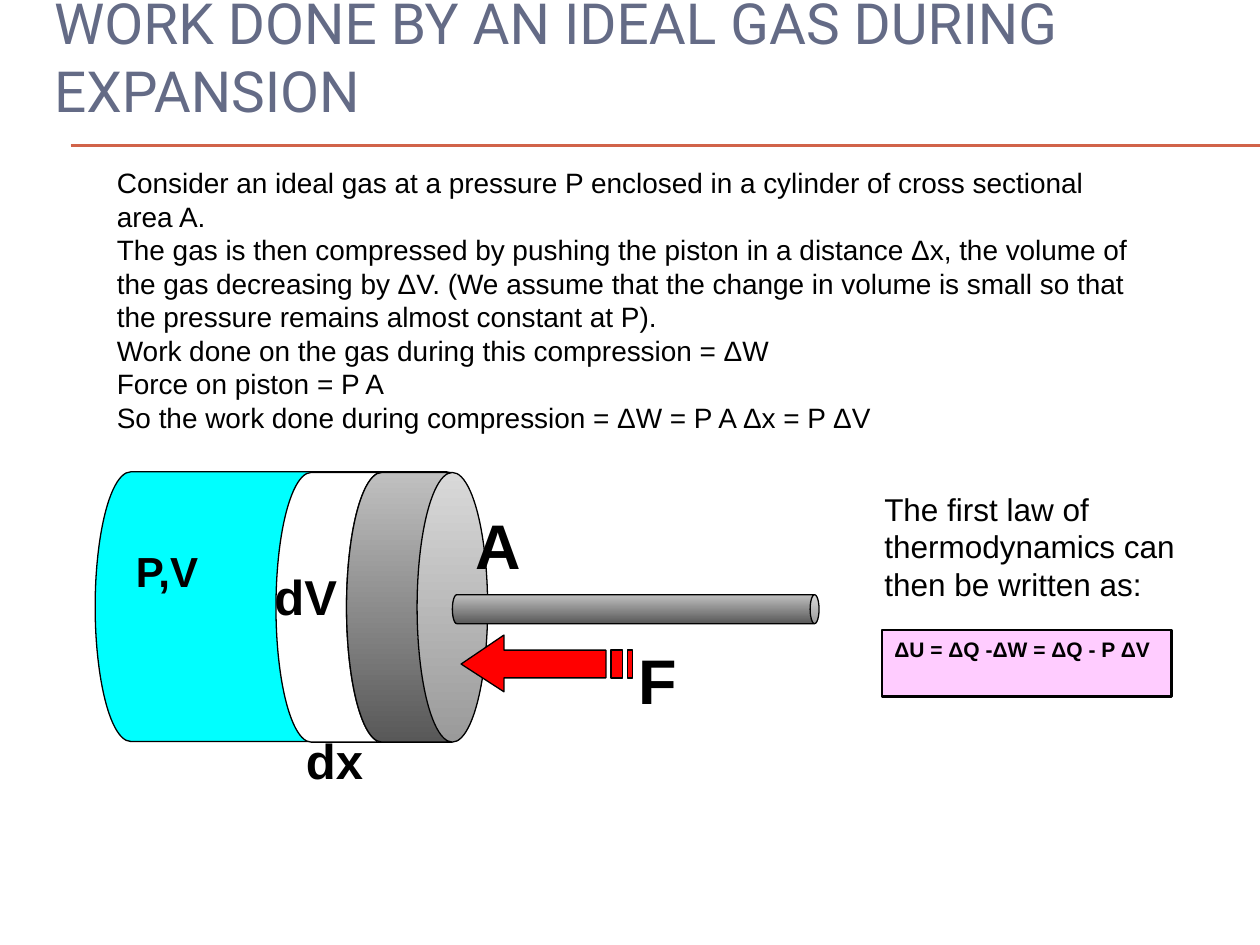
from lxml import etree
from pptx import Presentation
from pptx import util as u
from pptx.dml.color import RGBColor
from pptx.enum import shapes, text
from pptx.oxml.ns import qn

SHAPE = shapes.MSO_SHAPE
ANCHOR = text.MSO_ANCHOR
BLACK = "000000"
STEEL = ("C0C0C0", "585858")


def rgb(value):
    return RGBColor.from_string(value)


def write(p, content, size=16, color=BLACK, bold=False, font="Arial"):
    """Add one formatted, left-aligned run to a paragraph."""
    p.alignment = text.PP_ALIGN.LEFT
    r = p.add_run()
    r.text = content
    r.font.name, r.font.size, r.font.bold = font, u.Pt(size), bold
    r.font.color.rgb = rgb(color)


class Deck:
    line_width = 0.75

    def __init__(self):
        self.prs = Presentation()
        self.prs.slide_width, self.prs.slide_height = u.Inches(10), u.Inches(7.5)
        self.slide = self.prs.slides.add_slide(self.prs.slide_layouts[5])

    def title(self, content, box, size, **fmt):
        sp = self.slide.shapes.title
        sp.left, sp.top, sp.width, sp.height = map(u.Inches, box)
        tf = sp.text_frame
        tf.auto_size = text.MSO_AUTO_SIZE.NONE
        tf.vertical_anchor = ANCHOR.MIDDLE
        p = tf.paragraphs[0]
        write(p, content, size=size, **fmt)
        # The closing line break takes the height of the title text
        p.add_line_break()
        etree.SubElement(p._p, qn("a:endParaRPr"), sz=str(round(size * 100)))

    def rule(self, x1, x2, y, color):
        c = self.slide.shapes.add_connector(
            shapes.MSO_CONNECTOR.STRAIGHT, *map(u.Inches, (x1, y, x2, y)))
        c.line.color.rgb, c.line.width = rgb(color), u.Pt(self.line_width)
        etree.SubElement(c._element.spPr, qn("a:effectLst"))

    def text(self, paragraphs, box, anchor=ANCHOR.TOP, wrap=True, inset=0.05, **fmt):
        tf = self.slide.shapes.add_textbox(*map(u.Inches, box)).text_frame
        tf.word_wrap, tf.vertical_anchor = wrap, anchor
        tf.margin_top = tf.margin_bottom = u.Inches(inset)
        for i, content in enumerate(paragraphs):
            write(tf.add_paragraph() if i else tf.paragraphs[0], content, **fmt)
        return tf

    def paint(self, sp, fill, width):
        sp.shadow.inherit = False
        sp.line.color.rgb, sp.line.width = rgb(BLACK), u.Pt(width)
        if isinstance(fill, str):
            sp.fill.solid()
            sp.fill.fore_color.rgb = rgb(fill)
            return
        # Light at the top of the slide, dark at the bottom, whatever the rotation
        sp.fill.gradient()
        sp.fill.gradient_angle = 270
        for stop, color in zip(sp.fill.gradient_stops, fill):
            stop.color.rgb = rgb(color)
        sp._element.spPr.find(qn("a:gradFill")).set("rotWithShape", "0")

    def shape(self, kind, box, fill, width=line_width):
        sp = self.slide.shapes.add_shape(kind, *map(u.Inches, box))
        self.paint(sp, fill, width)
        return sp

    def can(self, box, adj, fill):
        """Cylinder lying on its side, lid to the right."""
        sp = self.shape(SHAPE.CAN, box, fill)
        sp.rotation, sp.adjustments[0] = 90, adj

    def outline(self, contours, fill):
        """Closed contours, in hundredths of an inch, as one shape."""
        fb = None
        for first, *rest in contours:
            if fb is None:
                fb = self.slide.shapes.build_freeform(*first, scale=u.Inches(0.01))
            else:
                fb.move_to(*first)
            fb.add_line_segments(rest, close=True)
        self.paint(fb.convert_to_shape(), fill, self.line_width)


def main():
    d = Deck()

    # Heading and double rule
    for y in (1.15, 1.16):
        d.rule(0.56, 10, y, "D16349")
    d.title("WORK DONE BY AN IDEAL GAS DURING EXPANSION", (0.33, 0, 9.5, 1.42),
            size=32.4, color="646B86", font="Roboto")

    # Cylinder: gas, swept volume, piston and rod
    d.can((1.22, 3.28, 2.14, 3.07), 0.264, "00FFFF")
    d.can((1.68, 4.26, 2.14, 1.12), 0.5, "FFFFFF")
    d.can((2.24, 4.26, 2.14, 1.12), 0.5, STEEL)
    d.can((4.93, 3.38, 0.23, 2.91), 0.308, STEEL)

    # Labels on the cylinder
    d.text(["dV"], (2.08, 4.5, 0.72, 0.7), wrap=False, inset=0, size=28, bold=True)
    d.text(["dx"], (2.33, 5.75, 0.91, 0.7), size=28, bold=True)
    d.text(["P,V"], (0.98, 4.33, 0.81, 0.58), wrap=False, inset=0, size=24, bold=True)
    d.text(["F"], (4.97, 5.04, 0.91, 0.7), size=36, bold=True)

    # Force arrow with two stripes at its tail
    top, bottom = 516, 538
    arrow = [(400, 504), (400, top), (481, top), (481, bottom),
             (400, bottom), (400, 549), (366, 527)]
    stripes = [[(right, top), (right, bottom), (left, bottom), (left, top)]
               for left, right in ((485, 494), (498, 502))]
    d.outline([arrow, *stripes], "FF0000")

    # Piston area label
    tf = d.text([" "], (3.64, 3.97, 0.91, 0.7), size=10)
    write(tf.paragraphs[0], "A", size=36, bold=True)

    # Derivation
    d.text([
        "Consider an ideal gas at a pressure P enclosed in a cylinder of cross "
        "sectional area A.",
        "The gas is then compressed by pushing the piston in a distance Δx, the "
        "volume of the gas decreasing by ΔV. (We assume that the change in volume "
        "is small so that the pressure remains almost constant at P).",
        "Work done on the gas during this compression = ΔW",
        "Force on piston = P A",
        "So the work done during compression = ΔW = P A Δx = P ΔV",
    ], (0.83, 1.25, 8.33, 2.26), anchor=ANCHOR.MIDDLE)

    # First law
    sp = d.shape(SHAPE.RECTANGLE, (7, 5, 2.3, 0.53), "FFCCFF", 1.5)
    sp.text_frame.vertical_anchor = ANCHOR.TOP
    write(sp.text_frame.paragraphs[0], "ΔU = ΔQ -ΔW = ΔQ - P ΔV", size=12, bold=True)
    d.text(["The first law of thermodynamics can then be written as:"],
           (6.92, 3.83, 2.83, 1.01), anchor=ANCHOR.MIDDLE, size=18)

    d.prs.save("out.pptx")


if __name__ == "__main__":
    main()
